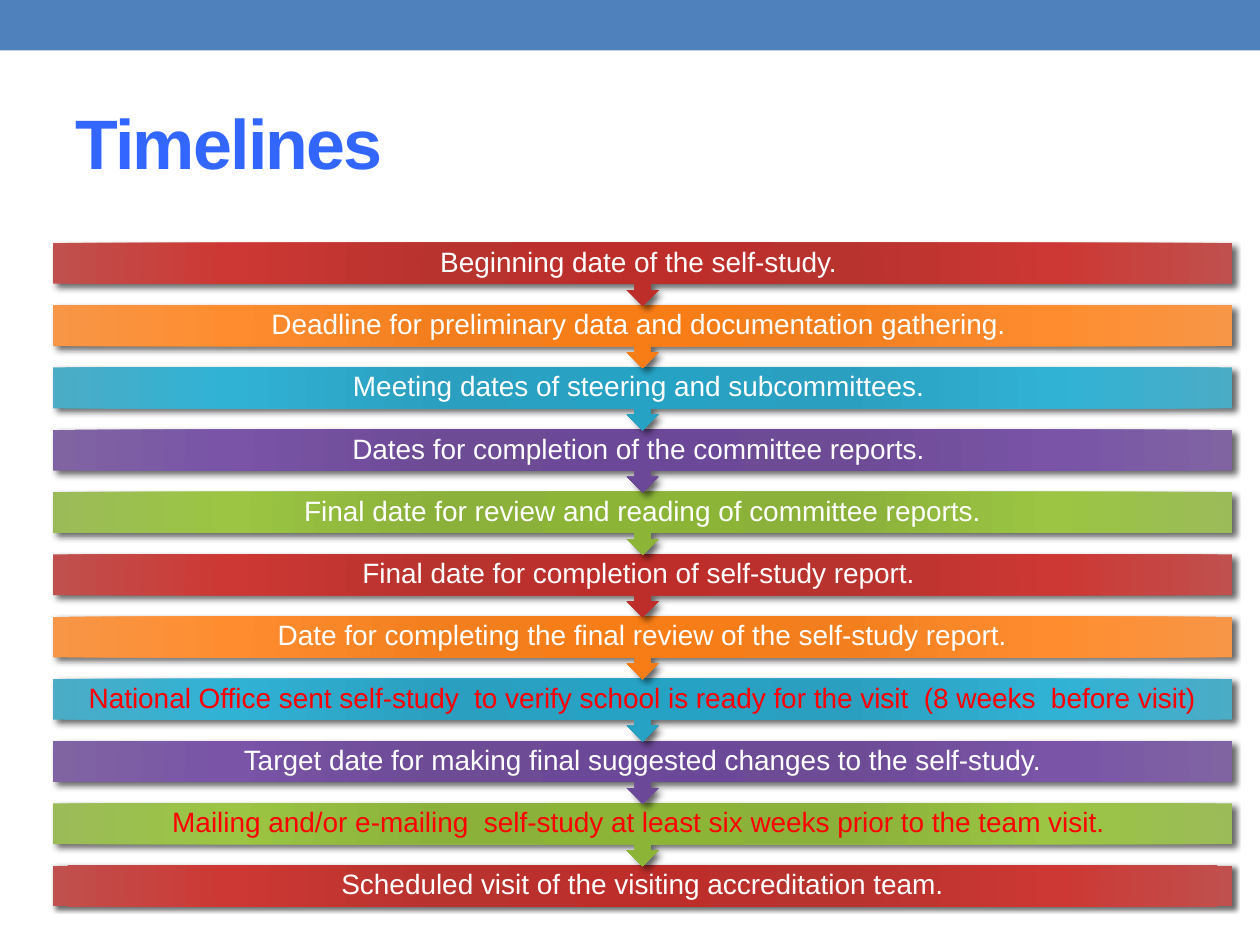
from dataclasses import dataclass

from pptx import Presentation
from pptx.dml.color import RGBColor
from pptx.enum.shapes import MSO_SHAPE
from pptx.enum.text import MSO_ANCHOR, MSO_AUTO_SIZE, PP_ALIGN
from pptx.oxml import parse_xml
from pptx.oxml.ns import nsdecls, qn
from pptx.util import Pt

WHITE = RGBColor(0xFF, 0xFF, 0xFF)
ALERT = RGBColor(0xFF, 0x00, 0x00)
BANNER = RGBColor(0x4F, 0x81, 0xBD)
TITLE = RGBColor(0x33, 0x66, 0xFF)
SHADOW = RGBColor(0x00, 0x00, 0x00)


def palette(*codes: str) -> tuple[RGBColor, ...]:
    return tuple(RGBColor.from_string(code) for code in codes)


# Colours from the middle of a bar to its ends
RED = palette("BD2D29", "B8322E", "CD3834", "C0504D")
ORANGE = palette("F97D16", "F27E1E", "FF8D30", "F79646")
BLUE = palette("26A2C4", "2B9FBF", "30B2D5", "4BACC6")
PURPLE = palette("6C4898", "6D4B95", "7954A7", "8064A2")
GREEN = palette("8CB537", "8BB13B", "9BC542", "9BBB59")
CYCLE = (RED, ORANGE, BLUE, PURPLE, GREEN)
STOPS = (0, 34, 70, 100)

# Geometry in points
SLIDE_WIDTH, SLIDE_HEIGHT = 720, 540
BAR_LEFT, BAR_WIDTH, BAR_HEIGHT = 30.24, 673.92, 23.34
FIRST_TOP, PITCH, CALLOUT_HEIGHT = 138.8, 35.58, 35.9


@dataclass(frozen=True)
class Step:
    text: str
    color: RGBColor = WHITE


STEPS = (
    Step("Beginning date of the self-study. "),
    Step("Deadline for preliminary data and documentation gathering. "),
    Step("Meeting dates of steering and subcommittees. "),
    Step("Dates for completion of the committee reports. "),
    Step("Final date for review and reading of committee reports."),
    Step("Final date for completion of self-study report. "),
    Step("Date for completing the final review of the self-study report."),
    Step("National Office sent self-study  to verify school is ready for the visit  "
         "(8 weeks  before visit)", ALERT),
    Step("Target date for making final suggested changes to the self-study."),
    Step("Mailing and/or e-mailing  self-study at least six weeks prior to the team visit. ",
         ALERT),
    Step("Scheduled visit of the visiting accreditation team."),
)


def add_text(slide, text: str, left: float, top: float, width: float, height: float, *,
             size: float, color: RGBColor, bold: bool = False,
             align: PP_ALIGN = PP_ALIGN.LEFT, inset_x: float = 7.2, inset_y: float = 3.6,
             line_spacing: float = 1.0, tracking: float = 0) -> None:
    frame = slide.shapes.add_textbox(Pt(left), Pt(top), Pt(width), Pt(height)).text_frame
    frame.word_wrap = True
    frame.auto_size = MSO_AUTO_SIZE.NONE
    frame.vertical_anchor = MSO_ANCHOR.MIDDLE
    frame.margin_left = frame.margin_right = Pt(inset_x)
    frame.margin_top = frame.margin_bottom = Pt(inset_y)
    paragraph = frame.paragraphs[0]
    paragraph.alignment = align
    paragraph.line_spacing = line_spacing
    run = paragraph.add_run()
    run.text = text
    run.font.name = "Arial"
    run.font.size = Pt(size)
    run.font.bold = bold
    run.font.color.rgb = color
    if tracking:
        run.font._element.set("spc", str(int(tracking * 100)))


def add_plain_shape(slide, kind: MSO_SHAPE, left: float, top: float, width: float,
                    height: float, fill: RGBColor):
    shape = slide.shapes.add_shape(kind, Pt(left), Pt(top), Pt(width), Pt(height))
    shape.shadow.inherit = False
    shape.fill.solid()
    shape.fill.fore_color.rgb = fill
    shape.line.fill.background()
    return shape


def apply_glow(shape, colors: tuple[RGBColor, ...]) -> None:
    """Give the shape a radial gradient and a soft shadow to the lower right."""
    stops = "".join(f'<a:gs pos="{stop * 1000}"><a:srgbClr val="{color}"/></a:gs>'
                    for stop, color in zip(STOPS, colors))
    gradient = parse_xml(
        f'<a:gradFill {nsdecls("a")} rotWithShape="1"><a:gsLst>{stops}</a:gsLst>'
        '<a:path path="circle"><a:fillToRect l="100000" t="100000" r="100000" b="100000"/>'
        '</a:path></a:gradFill>')
    effects = parse_xml(
        f'<a:effectLst {nsdecls("a")}><a:outerShdw blurRad="{Pt(3)}" dist="{Pt(2)}" '
        f'dir="2700000" rotWithShape="0"><a:srgbClr val="{SHADOW}"><a:alpha val="60000"/>'
        '</a:srgbClr></a:outerShdw></a:effectLst>')
    properties = shape._element.spPr
    properties.replace(properties.find(qn("a:solidFill")), gradient)
    properties.replace(properties.find(qn("a:effectLst")), effects)


def add_step(slide, index: int, step: Step) -> None:
    top = FIRST_TOP + index * PITCH
    colors = CYCLE[index % len(CYCLE)]
    is_last = index == len(STEPS) - 1
    kind = MSO_SHAPE.RECTANGLE if is_last else MSO_SHAPE.UP_ARROW_CALLOUT
    height = BAR_HEIGHT if is_last else CALLOUT_HEIGHT
    bar = add_plain_shape(slide, kind, BAR_LEFT, top, BAR_WIDTH, height, colors[0])
    if not is_last:
        bar.rotation = 180
    apply_glow(bar, colors)
    add_text(slide, step.text, BAR_LEFT, top, BAR_WIDTH, BAR_HEIGHT, size=16,
             color=step.color, align=PP_ALIGN.CENTER, inset_x=8.96, inset_y=8.96,
             line_spacing=0.9)


def main() -> None:
    presentation = Presentation()
    presentation.slide_width = Pt(SLIDE_WIDTH)
    presentation.slide_height = Pt(SLIDE_HEIGHT)
    slide = presentation.slides.add_slide(presentation.slide_layouts[6])

    # Banner and title
    add_plain_shape(slide, MSO_SHAPE.RECTANGLE, 0, 0, SLIDE_WIDTH, 28.8, BANNER)
    add_text(slide, "Timelines", 36, 42, 648, 78, size=40, color=TITLE, bold=True,
             tracking=-1)

    # Steps, drawn from the last so that each arrow overlaps the next bar
    for index, step in reversed(list(enumerate(STEPS))):
        add_step(slide, index, step)

    presentation.save("out.pptx")


if __name__ == "__main__":
    main()
